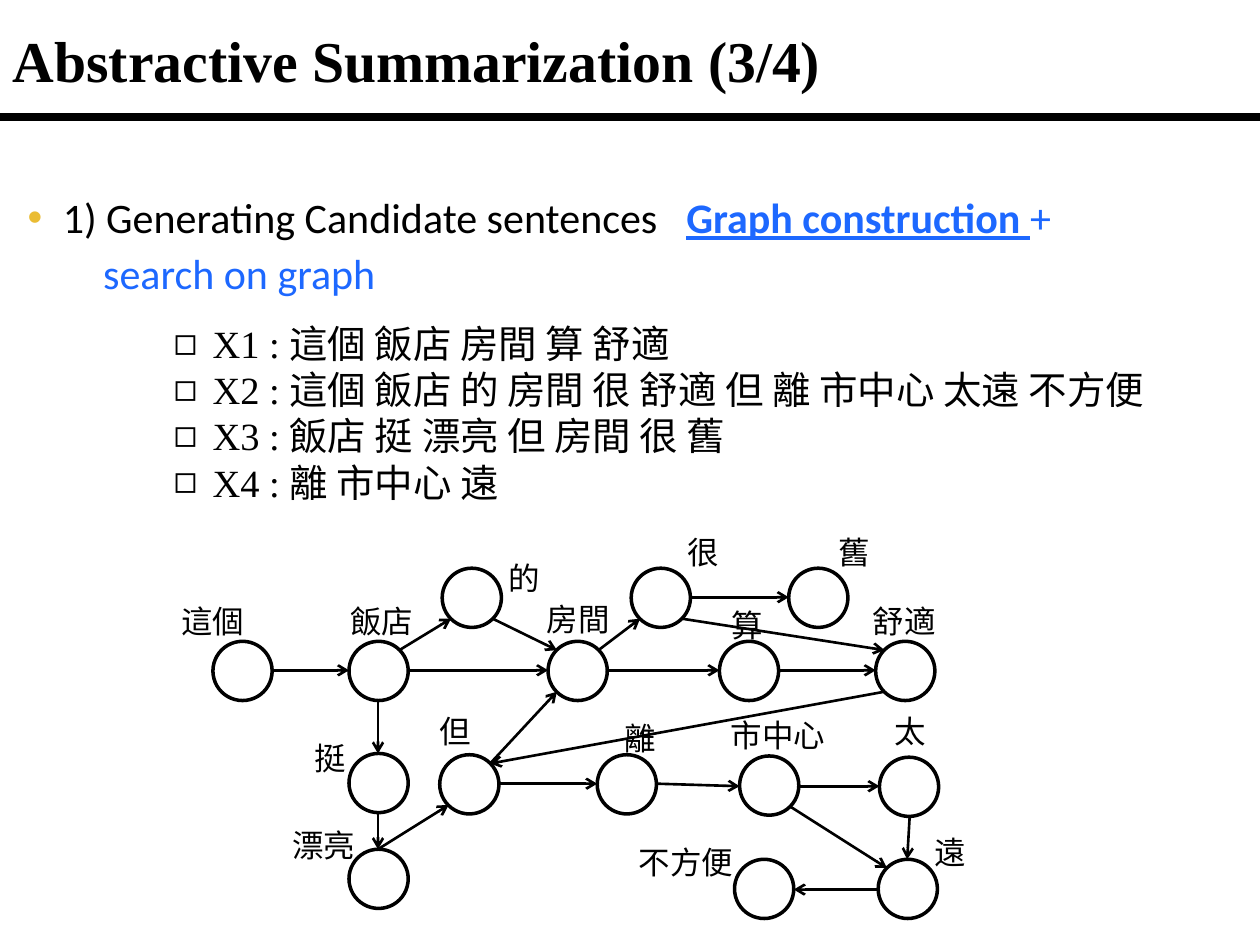
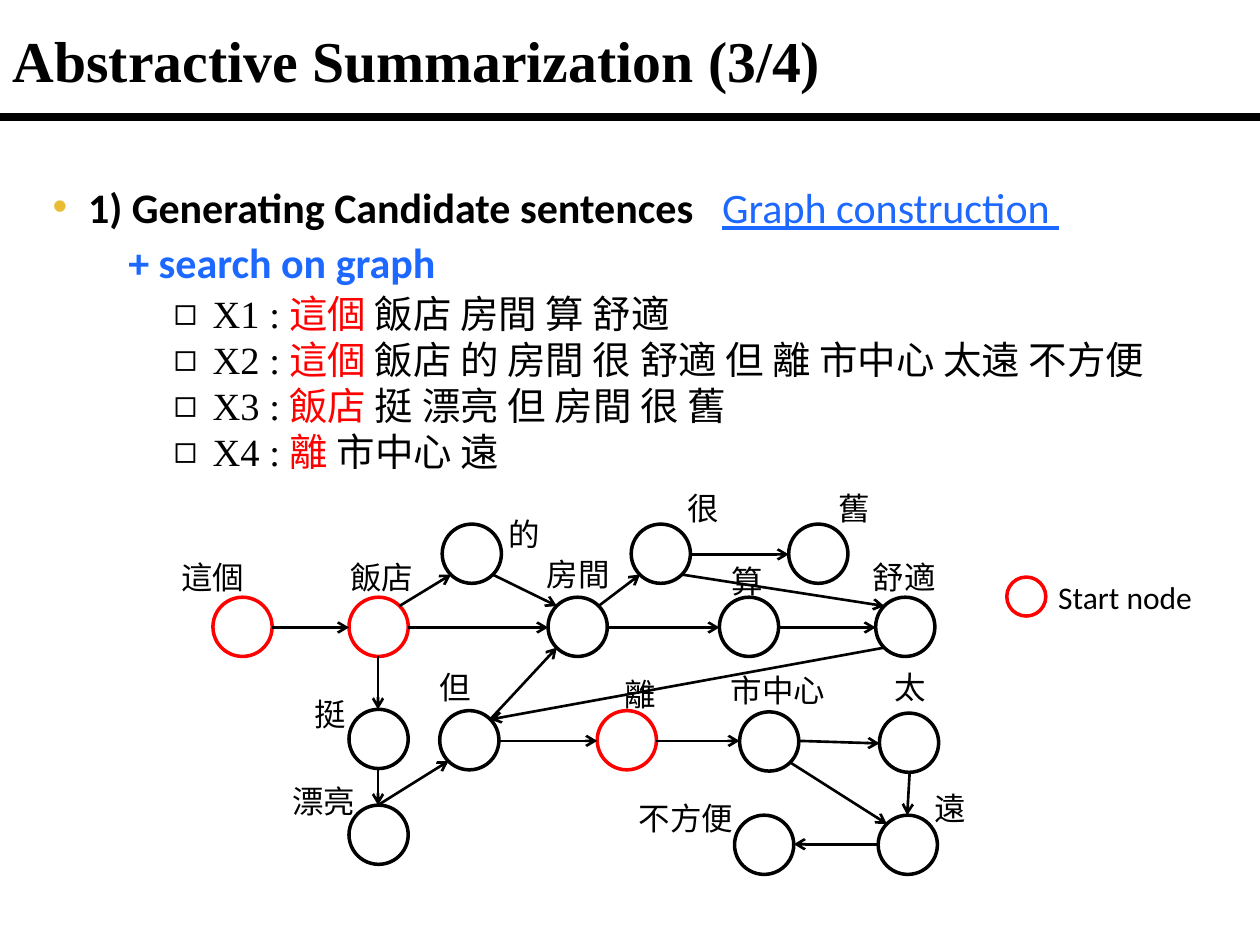
import pptx
import pptx.util
import pptx.dml.color
import pptx.enum.shapes
import pptx.enum.text
import pptx.oxml.ns
import lxml.etree

PX = 9144
RGBColor = pptx.dml.color.RGBColor
BLACK = RGBColor(0x00, 0x00, 0x00)
WHITE = RGBColor(0xFF, 0xFF, 0xFF)
RED = RGBColor(0xFF, 0x00, 0x00)
BLUE = RGBColor(0x1D, 0x68, 0xFF)
GOLD = "EABC33"
SERIF, SANS, CJK = "Times New Roman", "Calibri", "Arial"

TITLE = "Abstractive Summarization (3/4)"
SENTENCES = [
    ("X1 : ", "這個", " 飯店 房間 算 舒適"),
    ("X2 : ", "這個", " 飯店 的 房間 很 舒適 但 離 市中心 太遠 不方便"),
    ("X3 : ", "飯店", " 挺 漂亮 但 房間 很 舊"),
    ("X4 : ", "離", " 市中心 遠"),
]
START_WORDS = {word for _, word, _ in SENTENCES}

NODE = 47
NODES = {
    "的": (351, 451, 394, 439, 49),
    "很": (501, 451, 536, 418, 60),
    "舊": (626, 451, 656, 418, 39),
    "這個": (169, 509, 134, 473, 83),
    "飯店": (277, 509, 268, 473, 74),
    "房間": (435, 509, 424, 471, 77),
    "算": (571, 509, 571, 476, 53),
    "舒適": (695, 509, 683, 473, 93),
    "挺": (277, 598, 240, 582, 61),
    "但": (349, 599, 339, 560, 47),
    "離": (474, 599, 486, 566, 56),
    "市中心": (587, 600, 570, 563, 98),
    "太": (698, 601, 700, 560, 53),
    "漂亮": (277, 674, 222, 651, 73),
    "不方便": (583, 682, 497, 664, 107),
    "遠": (697, 682, 732, 656, 54),
}
EDGES = [
    ("這個", "E", "飯店", "W"), ("飯店", "E", "房間", "W"),
    ("房間", "E", "算", "W"), ("算", "E", "舒適", "W"),
    ("飯店", "NE", "的", "SW"), ("的", "SE", "房間", "NW"),
    ("房間", "NE", "很", "SW"), ("很", "E", "舊", "W"),
    ("很", "SE", "舒適", "NW"), ("舒適", "SW", "但", "NE"),
    ("飯店", "S", "挺", "N"), ("挺", "S", "漂亮", "N"),
    ("漂亮", "N", "但", "SW"), ("但", "NE", "房間", "SW"),
    ("但", "E", "離", "W"), ("離", "E", "市中心", "W"),
    ("市中心", "E", "太", "W"), ("市中心", "SE", "遠", "NW"),
    ("太", "S", "遠", "N"), ("遠", "W", "不方便", "E"),
]


def emu(*lengths):
    return [length * PX for length in lengths]


def add_xml(parent, tag, **attrs):
    return lxml.etree.SubElement(parent, pptx.oxml.ns.qn(tag), **attrs)


def add_run(p, text, font, size, color=BLACK, bold=False, underline=False):
    r = p.add_run()
    r.text = text
    r.font.name = font
    r.font.size = pptx.util.Pt(size)
    r.font.color.rgb = color
    r.font.bold = bold
    r.font.underline = underline
    return r


def set_indent(p, left, hanging=0, bullet=None, color=None):
    pPr = p._p.get_or_add_pPr()
    pPr.set("marL", str(left * PX))
    pPr.set("indent", str(-hanging * PX))
    if color:
        add_xml(add_xml(pPr, "a:buClr"), "a:srgbClr", val=color)
    if bullet:
        add_xml(pPr, "a:buFont", typeface=CJK)
        add_xml(pPr, "a:buChar", char=bullet)


def add_box(shapes, x, y, w, h, grow=True):
    tf = shapes.add_textbox(*emu(x, y, w, h)).text_frame
    tf.word_wrap = True
    if grow:
        tf.auto_size = pptx.enum.text.MSO_AUTO_SIZE.SHAPE_TO_FIT_TEXT
    return tf


def add_label(shapes, text, x, y, w, font=CJK):
    add_run(add_box(shapes, x, y, w, 40).paragraphs[0], text, font, 18)


def add_line(shapes, start, end, width, arrow=False):
    line = shapes.add_connector(
        pptx.enum.shapes.MSO_CONNECTOR.STRAIGHT, *emu(*start, *end))
    line.line.color.rgb = BLACK
    line.line.width = pptx.util.Pt(width)
    if arrow:
        add_xml(line.line._get_or_add_ln(), "a:tailEnd", type="arrow")
    add_xml(line._element.spPr, "a:effectLst")


def add_circle(shapes, x, y, size, color):
    sp = shapes.add_shape(
        pptx.enum.shapes.MSO_SHAPE.OVAL, *emu(x, y, size, size))
    sp.shadow.inherit = False
    sp.fill.solid()
    sp.fill.fore_color.rgb = WHITE
    sp.line.color.rgb = color
    sp.line.width = pptx.util.Pt(2)


def node_point(word, side, shift):
    x, y = NODES[word][:2]
    radius = NODE / 2
    reach = radius * (0.707 if len(side) == 2 else 1)
    dx = ("E" in side) - ("W" in side)
    dy = ("S" in side) - ("N" in side)
    return round(x + radius + dx * reach), round(y + shift + radius + dy * reach)


def add_graph(shapes, shift=0, mark_starts=False):
    for word, (x, y, *_) in NODES.items():
        color = RED if mark_starts and word in START_WORDS else BLACK
        add_circle(shapes, x, y + shift, NODE, color)
    for source, out_side, target, in_side in EDGES:
        add_line(shapes, node_point(source, out_side, shift),
                 node_point(target, in_side, shift), 1.5, arrow=True)
    for word, (_, _, x, y, w) in NODES.items():
        add_label(shapes, word, x, y + shift, w)


def add_sentences(s, y, w, first_color):
    tf = add_box(s.shapes, 128, y, w, 158)
    for i, (name, first, rest) in enumerate(SENTENCES):
        p = tf.add_paragraph() if i else tf.paragraphs[0]
        set_indent(p, 31, 31, "◻")
        for text, color in ((name, BLACK), (first, first_color), (rest, BLACK)):
            add_run(p, text, SERIF, 22, color)


def add_heading(s, x, y, w, h, bold, link_bold, tail, second_line):
    tf = add_box(s.shapes, x, y, w, h, grow=False)
    p = tf.paragraphs[0]
    set_indent(p, 40, 28, "•", GOLD)
    add_run(p, "1) Generating Candidate sentences", SANS, 24, bold=bold)
    gap = add_run(p, " ", SANS, 24)
    gap.font._element.set("spc", "1100")
    add_run(p, "Graph construction ", SANS, 24, BLUE, link_bold, True)
    if tail:
        add_run(p, tail, SANS, 24, BLUE)
    p2 = tf.add_paragraph()
    set_indent(p2, 72)
    add_run(p2, second_line, SANS, 24, BLUE, bold)
    for p in tf.paragraphs:
        p.space_before = pptx.util.Pt(3)


def add_titled_slide(prs):
    s = prs.slides.add_slide(prs.slide_layouts[5])
    title = s.shapes.title
    title.left, title.top, title.width, title.height = emu(0, 8, 999, 79)
    tf = title.text_frame
    tf.auto_size = pptx.enum.text.MSO_AUTO_SIZE.NONE
    tf.vertical_anchor = pptx.enum.text.MSO_ANCHOR.MIDDLE
    p = tf.paragraphs[0]
    p.alignment = pptx.enum.text.PP_ALIGN.LEFT
    add_run(p, TITLE, SERIF, 33, bold=True)
    add_line(s.shapes, (0, 93), (1000, 93), 4.5)
    return s


def main():
    prs = pptx.Presentation()
    prs.slide_width, prs.slide_height = emu(1000, 750)

    s = add_titled_slide(prs)
    add_sentences(s, 249, 813, BLACK)
    add_graph(s.shapes)
    add_heading(s, 0, 147, 988, 147, False, True, "+", "search on graph")

    s = add_titled_slide(prs)
    add_sentences(s, 225, 829, RED)
    add_heading(s, 20, 139, 949, 473, True, False, "", "+ search on graph")
    group = s.shapes.add_group_shape()
    add_graph(group.shapes, shift=-35, mark_starts=True)
    add_circle(group.shapes, 799, 458, 31, RED)
    add_label(group.shapes, "Start node", 830, 454, 139, SANS)

    prs.save("out.pptx")


if __name__ == "__main__":
    main()
